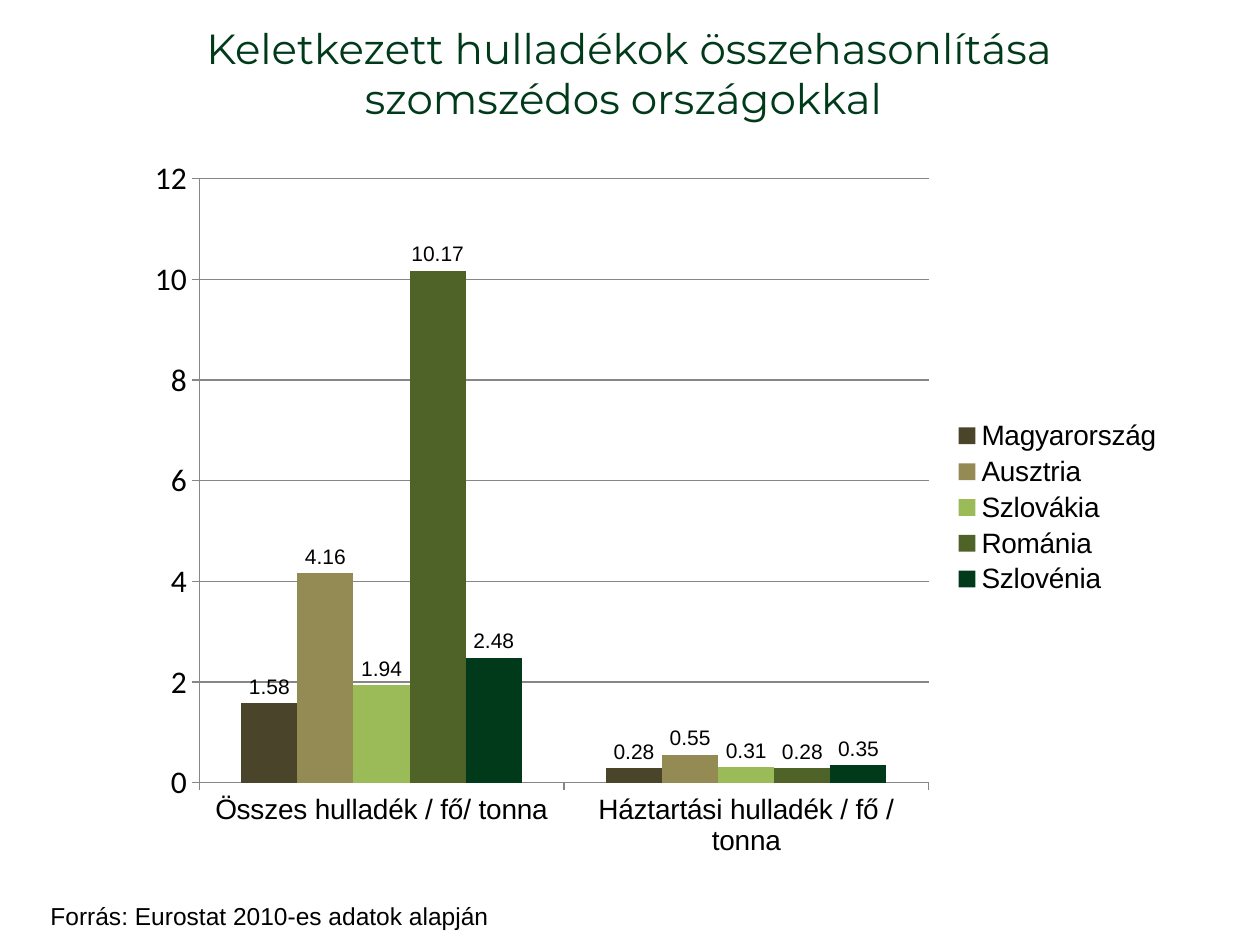
from pptx import Presentation, util as u
from pptx.chart.data import CategoryChartData
from pptx.dml.color import RGBColor
from pptx.enum import chart as ch, text

PX = 914400 // 126
SIZE = (1260, 945)
GREEN, BLACK, GREY = "003A1A", "000000", "868686"

TITLE = "Keletkezett hulladékok összehasonlítása szomszédos országokkal "
SOURCE = "Forrás: Eurostat 2010-es adatok alapján"
CATS = ["Összes hulladék / fő/ tonna", "Háztartási hulladék / fő / tonna"]
SERIES = [
    ("Magyarország", (1.58, 0.28), "4A452A"),
    ("Ausztria", (4.16, 0.55), "948A54"),
    ("Szlovákia", (1.94, 0.31), "9BBB59"),
    ("Románia", (10.17, 0.28), "4F6228"),
    ("Szlovénia", (2.48, 0.35), GREEN),
]


def box(*px):
    return [u.Emu(n * PX) for n in px]


def rgb(code):
    return RGBColor.from_string(code)


def style(font, name, size, color=BLACK):
    font.name, font.size = name, u.Pt(size)
    font.color.rgb = rgb(color)


def line(fmt):
    fmt.line.color.rgb = rgb(GREY)
    fmt.line.width = u.Pt(0.75)


def add_text(slide, words, place, align, *look):
    frame = slide.shapes.add_textbox(*box(*place)).text_frame
    frame.word_wrap = True
    para = frame.paragraphs[0]
    para.alignment = align
    run = para.add_run()
    run.text = words
    style(run.font, *look)


def add_bars(slide, place):
    data = CategoryChartData(number_format="General")
    data.categories = CATS
    for name, vals, _ in SERIES:
        data.add_series(name, vals)
    kind = ch.XL_CHART_TYPE.COLUMN_CLUSTERED
    chart = slide.shapes.add_chart(kind, *box(*place), data).chart
    style(chart.font, "Calibri", 18)
    chart.has_title = False

    chart.has_legend = True
    chart.legend.position = ch.XL_LEGEND_POSITION.RIGHT
    chart.legend.include_in_layout = False
    style(chart.legend.font, "Arial", 16)

    cat, val = chart.category_axis, chart.value_axis
    style(cat.tick_labels.font, "Arial", 16)
    style(val.tick_labels.font, "Calibri", 18)
    val.has_major_gridlines = True
    for part in (cat, val, val.major_gridlines):
        line(part.format)
    for axis in (cat, val):
        axis.major_tick_mark = ch.XL_TICK_MARK.OUTSIDE
        axis.minor_tick_mark = ch.XL_TICK_MARK.NONE

    plot = chart.plots[0]
    plot.gap_width, plot.overlap = 150, 0
    plot.vary_by_categories = False
    for bar, (_, _, color) in zip(plot.series, SERIES):
        bar.format.fill.solid()
        bar.format.fill.fore_color.rgb = rgb(color)
        bar.invert_if_negative = False
        labels = bar.data_labels
        labels.show_value = True
        labels.position = ch.XL_LABEL_POSITION.OUTSIDE_END
        style(labels.font, "Arial", 12)


def main():
    deck = Presentation()
    deck.slide_width, deck.slide_height = box(*SIZE)
    slide = deck.slides.add_slide(deck.slide_layouts[6])
    add_text(slide, TITLE, (62, 16, 1134, 158), text.PP_ALIGN.CENTER,
             "Montserrat", 24, GREEN)
    add_bars(slide, (134, 145, 1042, 725))
    add_text(slide, SOURCE, (38, 895, 725, 43), text.PP_ALIGN.LEFT, "Arial", 14)
    deck.save("out.pptx")


if __name__ == "__main__":
    main()
